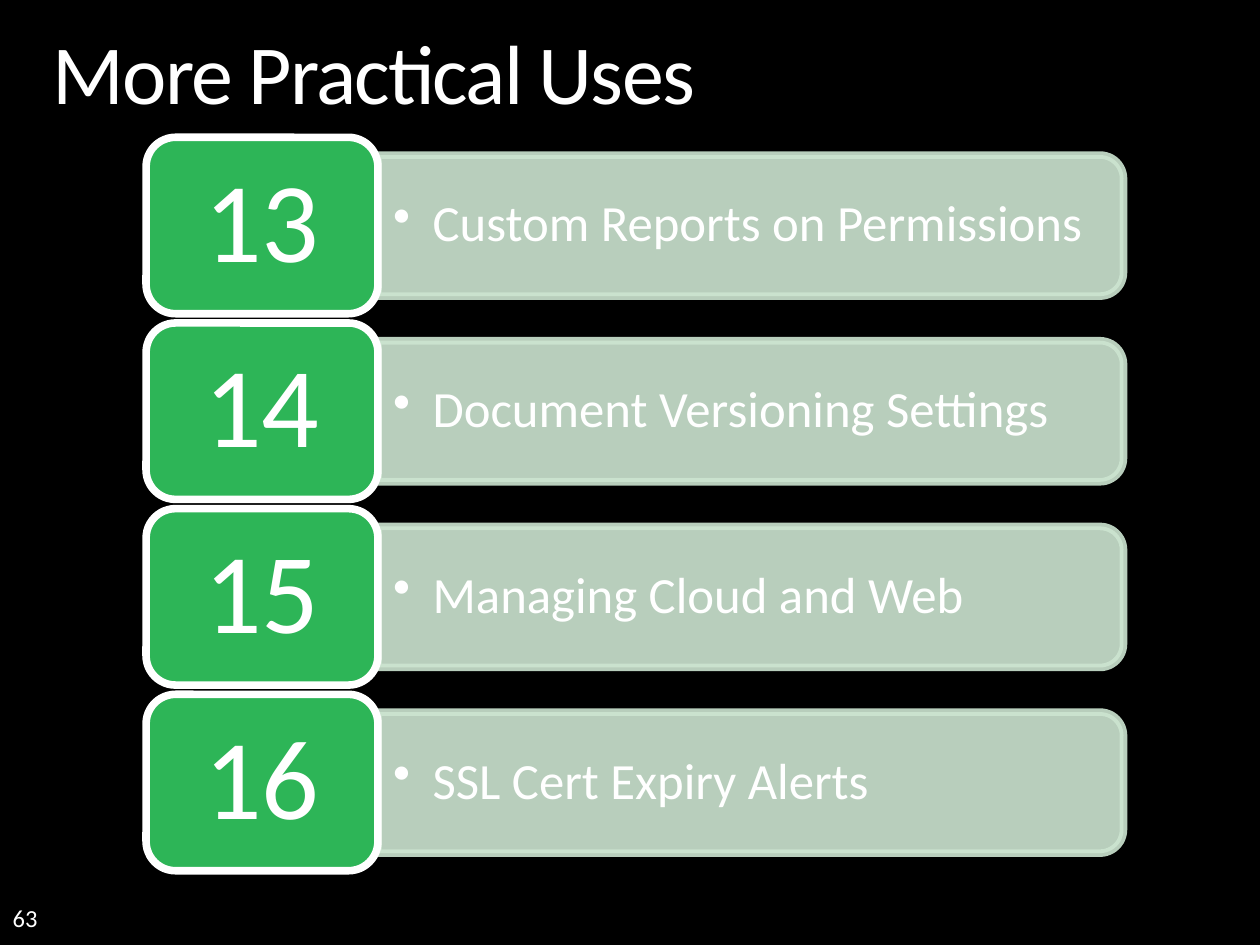
"""Build the "More Practical Uses" slide: four numbered bars on black."""
from dataclasses import dataclass

from lxml.etree import SubElement
from pptx import Presentation
from pptx.dml.color import RGBColor as RGB
from pptx.enum.shapes import MSO_SHAPE as Shape
from pptx.enum.text import MSO_ANCHOR as Anchor, PP_ALIGN as Align
from pptx.oxml.ns import qn
from pptx.util import Pt


@dataclass
class Theme:
    font: str = "Calibri"
    back: RGB = RGB(0, 0, 0)
    ink: RGB = RGB(255, 255, 255)
    badge: RGB = RGB(0x2D, 0xB5, 0x57)
    bar: RGB = RGB(0xCD, 0xE5, 0xD1)
    title: int = 48
    digit: int = 65
    label: int = 29
    page: int = 14
    line: float = 4.33


theme = Theme()


def write(shape, text, size, anchor, pad=0, space=0.9):
    frame = shape.text_frame
    frame.text = text
    frame.word_wrap = True
    frame.vertical_anchor = anchor
    frame.margin_left = frame.margin_right = Pt(pad)
    frame.margin_top = frame.margin_bottom = Pt(pad / 2)
    para = frame.paragraphs[0]
    para.line_spacing = space
    font = para.runs[0].font
    font.name, font.size = theme.font, Pt(size)
    font.color.rgb = theme.ink
    return para


def paint(shape, fill, edge):
    shape.shadow.inherit = False
    shape.fill.solid()
    shape.fill.fore_color.rgb = fill
    shape.line.color.rgb = edge
    shape.line.width = Pt(theme.line)


deck = Presentation()
deck.slide_width, deck.slide_height = Pt(720), Pt(540)
slide = deck.slides.add_slide(deck.slide_layouts[6])
slide.background.fill.solid()
slide.background.fill.fore_color.rgb = theme.back
shapes = slide.shapes

page = shapes.add_textbox(Pt(7.2), Pt(504), Pt(168), Pt(28.8))
write(page, "63", theme.page, Anchor.BOTTOM, space=1)

title = shapes.add_textbox(Pt(30), Pt(18), Pt(660), Pt(52.5))
para = write(title, "More Practical Uses", theme.title, Anchor.TOP)
para.runs[0].font._element.set("spc", "-100")

labels = ["Custom Reports on Permissions", "Document Versioning Settings",
          "Managing Cloud and Web", "SSL Cert Expiry Alerts"]
left, top, pitch = 83.5, 78.5, 106.1
wide, high = 132.5, 100.8
thick, length = 80.6, 426
start = left + wide

for row, label in enumerate(labels):
    y = top + row * pitch
    mid = y + high / 2

    bar = shapes.add_shape(Shape.ROUND_2_SAME_RECTANGLE,
                           Pt(start + (length - thick) / 2),
                           Pt(mid - length / 2), Pt(thick), Pt(length))
    bar.rotation = 90
    paint(bar, theme.bar, theme.bar)
    for tint in bar._element.spPr.iter(qn("a:srgbClr")):
        SubElement(tint, qn("a:alpha"), val="90000")

    box = shapes.add_textbox(Pt(start), Pt(mid - 36.4), Pt(422), Pt(72.8))
    para = write(box, label, theme.label, Anchor.MIDDLE, pad=8.7)
    props = para._p.get_or_add_pPr()
    props.set("marL", str(Pt(22.5)))
    props.set("indent", str(Pt(-22.5)))
    SubElement(props, qn("a:buChar"), char="•")

    badge = shapes.add_shape(Shape.ROUNDED_RECTANGLE,
                             Pt(left), Pt(y), Pt(wide), Pt(high))
    paint(badge, theme.badge, theme.ink)
    para = write(badge, str(13 + row), theme.digit, Anchor.MIDDLE)
    para.alignment = Align.CENTER

deck.save("out.pptx")
